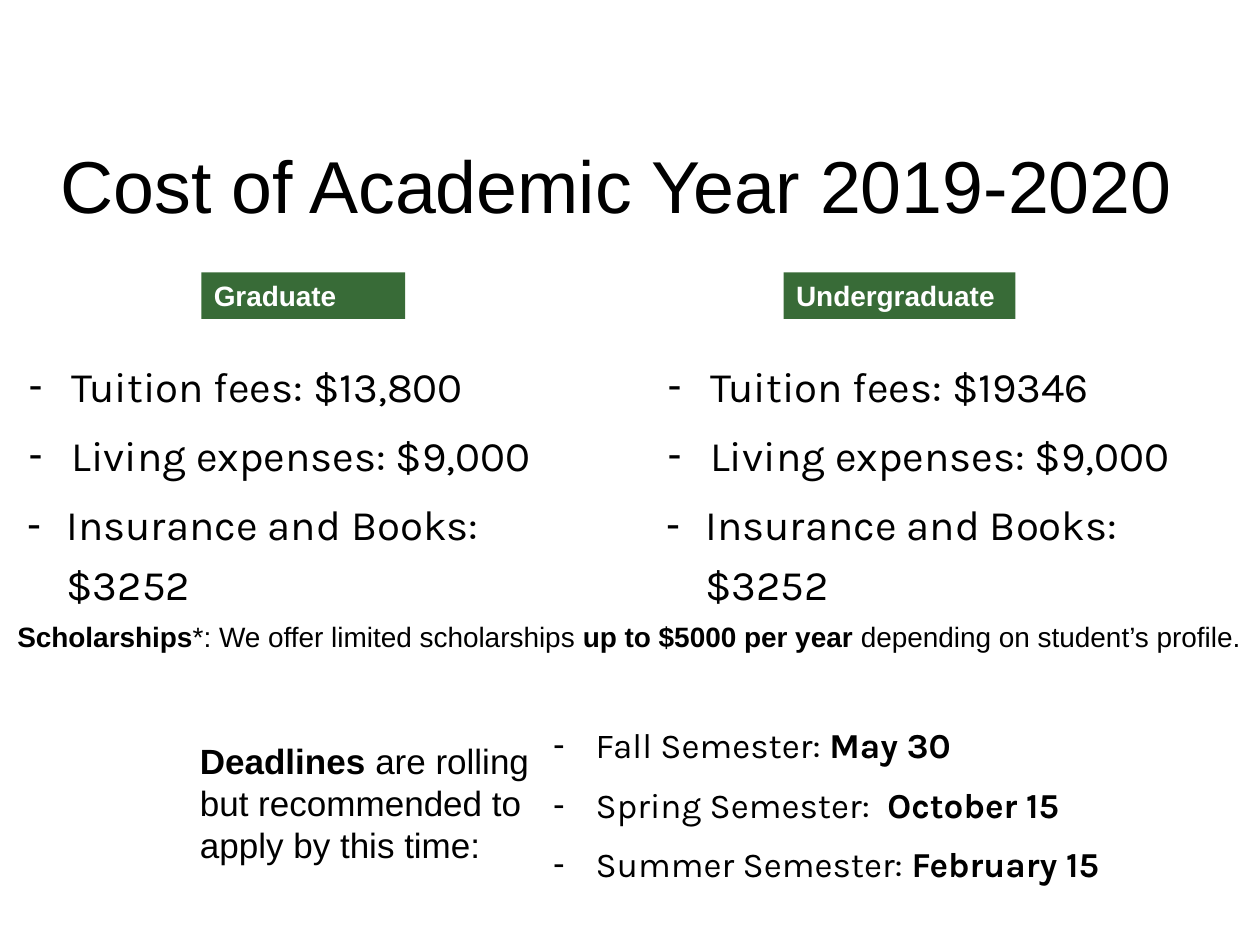
from lxml.etree import SubElement
from pptx import Presentation
from pptx.dml.color import RGBColor
from pptx.enum.shapes import MSO_SHAPE
from pptx.enum.text import MSO_ANCHOR, PP_ALIGN
from pptx.oxml.ns import qn
from pptx.util import Cm, Pt

THEME = {
    "ink": RGBColor.from_string("000000"),
    "pale": RGBColor.from_string("FFFFFF"),
    "green": RGBColor.from_string("386B37"),
    "sans": "Arial", "list": "Karla",
    "title": 42, "cost": 24, "body": 20, "small": 16,
}

TITLE = [[("Cost of Academic Year 2019-2020", False)]]
GROUPS = [
    {"name": "Graduate", "tuition": "$13,800", "left": -0.66, "tag": (4.06, 4.11)},
    {"name": "Undergraduate", "tuition": "$19346", "left": 12.22, "tag": (15.8, 4.67)},
]
COSTS = ["Living expenses: $9,000", "Insurance and Books: $3252"]
GRANTS = [[
    ("Scholarships", True),
    ("*: We offer limited scholarships ", False),
    ("up to $5000 per year ", True),
    ("depending on student’s profile.", False),
]]
NOTE = [
    [("Deadlines", True), (" are rolling", False)],
    [("but recommended to", False)],
    [("apply by this time:", False)],
]
DATES = [
    [("Fall Semester: ", False), ("May 30", True)],
    [("Spring Semester: ", False), (" October 15", True)],
    [("Summer Semester: ", False), ("February 15", True)],
]
WIDE, DEEP = (1.85, 0.86), (1.75, 0.79)


def dash(para, left, hang):
    """Give a paragraph a hanging dash bullet."""
    props = para._p.get_or_add_pPr()
    props.set("marL", str(Cm(left)))
    props.set("indent", str(-Cm(hang)))
    tint = SubElement(props, qn("a:buClr"))
    SubElement(tint, qn("a:srgbClr")).set("val", str(THEME["ink"]))
    SubElement(props, qn("a:buFont")).set("typeface", THEME["sans"])
    SubElement(props, qn("a:buChar")).set("char", "-")


def write(slide, lines, box, size="body", font="sans", color="ink",
          fill=None, anchor=MSO_ANCHOR.TOP, indents=()):
    """Place lines of (text, bold) runs in a box with the given format."""
    area = [Cm(n) for n in box]
    if fill:
        shape = slide.shapes.add_shape(MSO_SHAPE.RECTANGLE, *area)
        shape.shadow.inherit = False
        shape.fill.solid()
        shape.fill.fore_color.rgb = THEME[fill]
        shape.line.fill.background()
    else:
        shape = slide.shapes.add_textbox(*area)
    frame = shape.text_frame
    frame.word_wrap = True
    frame.vertical_anchor = anchor
    for row, line in enumerate(lines):
        para = frame.paragraphs[0] if row == 0 else frame.add_paragraph()
        para.alignment = PP_ALIGN.LEFT
        if indents:
            dash(para, *indents[row])
            para.line_spacing = 1.2
            para.space_before = Pt(5 if row else 0)
        for text, bold in line:
            run = para.add_run()
            run.text = text
            run.font.name = THEME[font]
            run.font.size = Pt(THEME[size])
            run.font.bold = bold
            run.font.color.rgb = THEME[color]


def main():
    """Build and save the cost slide."""
    deck = Presentation()
    deck.slide_width, deck.slide_height = Cm(25.4), Cm(19.05)
    slide = deck.slides.add_slide(deck.slide_layouts[6])
    write(slide, TITLE, (0.97, 2.13, 23.8, 3.18), size="title",
          anchor=MSO_ANCHOR.MIDDLE)
    for group in GROUPS:
        left, width = group["tag"]
        write(slide, [[(group["name"], True)]], (left, 5.49, width, 0.94),
              size="small", color="pale", fill="green")
        costs = [f"Tuition fees: {group['tuition']}"] + COSTS
        write(slide, [[(cost, False)] for cost in costs],
              (group["left"], 6.93, 12.95, 6.38), size="cost", font="list",
              indents=(WIDE, WIDE, DEEP))
    write(slide, DATES, (9.91, 14.3, 15.27, 5.23), font="list",
          indents=[WIDE] * len(DATES))
    write(slide, NOTE, (3.78, 14.78, 7.95, 2.82))
    write(slide, GRANTS, (0.1, 12.37, 26.29, 0.94), size="small")
    deck.save("out.pptx")


if __name__ == "__main__":
    main()
